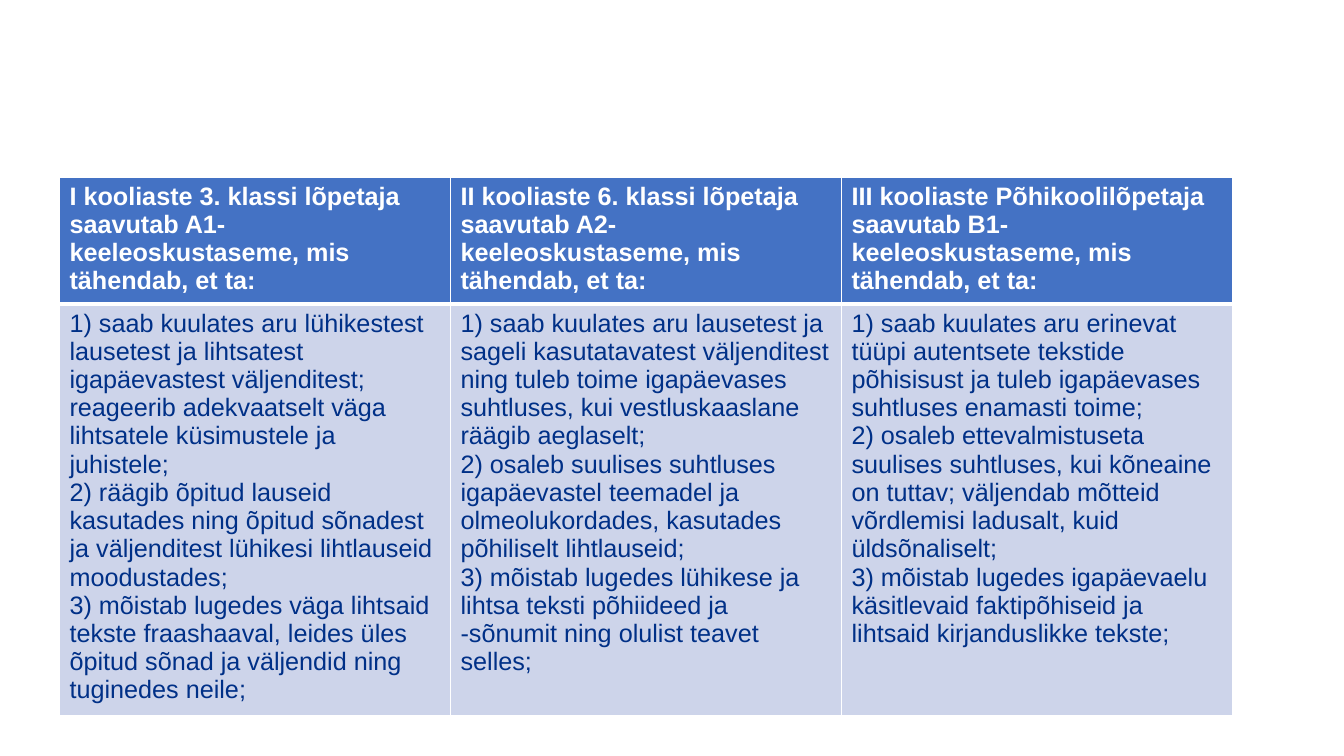
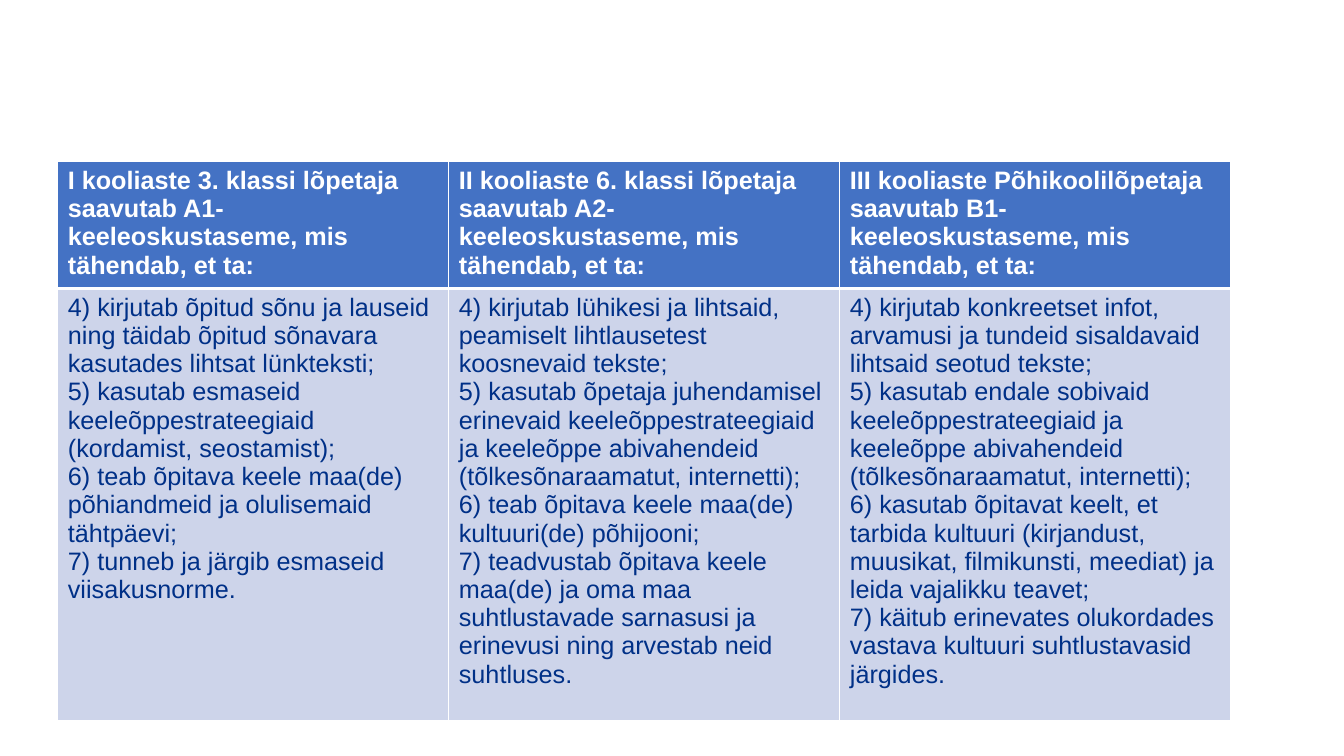
from lxml.etree import SubElement
from pptx import Presentation
from pptx.dml.color import RGBColor
from pptx.oxml.ns import qn
from pptx.util import Pt

WHITE = RGBColor(0xFF, 0xFF, 0xFF)
BLUE = RGBColor(0x44, 0x72, 0xC4)
NAVY = RGBColor(0x00, 0x30, 0x87)
PALE = RGBColor(0xCD, 0xD4, 0xEA)
FONT = "Arial"
SIZE = 18
COL = 279.3
HEAD = 90.6

HEADS = [
    "I kooliaste 3. klassi lõpetaja saavutab A1-keeleoskustaseme, mis tähendab, et ta:",
    "II kooliaste 6. klassi lõpetaja saavutab A2-keeleoskustaseme, mis tähendab, et ta:",
    "III kooliaste Põhikoolilõpetaja saavutab B1- keeleoskustaseme, mis tähendab, et ta:",
]

SPEECH = [
    [
        "1) saab kuulates aru lühikestest lausetest ja lihtsatest igapäevastest väljenditest; "
        "reageerib adekvaatselt väga lihtsatele küsimustele ja juhistele;",
        "2) räägib õpitud lauseid kasutades ning õpitud sõnadest ja väljenditest lühikesi "
        "lihtlauseid moodustades;",
        "3) mõistab lugedes väga lihtsaid tekste fraashaaval, leides üles õpitud sõnad ja "
        "väljendid ning tuginedes neile;",
    ],
    [
        "1) saab kuulates aru lausetest ja sageli kasutatavatest väljenditest ning tuleb toime "
        "igapäevases suhtluses, kui vestluskaaslane räägib aeglaselt;",
        "2) osaleb suulises suhtluses igapäevastel teemadel ja olmeolukordades, kasutades "
        "põhiliselt lihtlauseid;",
        "3) mõistab lugedes lühikese ja lihtsa teksti põhiideed ja -sõnumit ning olulist "
        "teavet selles;",
    ],
    [
        "1) saab kuulates aru erinevat tüüpi autentsete tekstide põhisisust ja tuleb "
        "igapäevases suhtluses enamasti toime;",
        "2) osaleb ettevalmistuseta suulises suhtluses, kui kõneaine on tuttav; väljendab "
        "mõtteid võrdlemisi ladusalt, kuid üldsõnaliselt;",
        "3) mõistab lugedes igapäevaelu käsitlevaid faktipõhiseid ja lihtsaid kirjanduslikke "
        "tekste;",
    ],
]

WRITING = [
    [
        "4) kirjutab õpitud sõnu ja lauseid ning täidab õpitud sõnavara kasutades lihtsat "
        "lünkteksti;",
        "5) kasutab esmaseid keeleõppestrateegiaid (kordamist, seostamist);",
        "6) teab õpitava keele maa(de) põhiandmeid ja olulisemaid tähtpäevi;",
        "7) tunneb ja järgib esmaseid viisakusnorme.",
    ],
    [
        "4) kirjutab lühikesi ja lihtsaid, peamiselt lihtlausetest koosnevaid tekste;",
        "5) kasutab õpetaja juhendamisel erinevaid keeleõppestrateegiaid ja keeleõppe "
        "abivahendeid (tõlkesõnaraamatut, internetti);",
        "6) teab õpitava keele maa(de) kultuuri(de) põhijooni;",
        "7) teadvustab õpitava keele maa(de) ja oma maa suhtlustavade sarnasusi ja erinevusi "
        "ning arvestab neid suhtluses.",
    ],
    [
        "4) kirjutab konkreetset infot, arvamusi ja tundeid sisaldavaid lihtsaid seotud tekste;",
        "5) kasutab endale sobivaid keeleõppestrateegiaid ja keeleõppe abivahendeid "
        "(tõlkesõnaraamatut, internetti);",
        "6) kasutab õpitavat keelt, et tarbida kultuuri (kirjandust, muusikat, filmikunsti, "
        "meediat) ja leida vajalikku teavet;",
        "7) käitub erinevates olukordades vastava kultuuri suhtlustavasid järgides.",
    ],
]


class Deck:
    """Holds the table style and the current slide."""

    def __init__(self):
        self.prs = Presentation()
        self.prs.slide_width, self.prs.slide_height = Pt(960), Pt(540)
        self.slide = None

    def page(self):
        self.slide = self.prs.slides.add_slide(self.prs.slide_layouts[6])

    def edge(self, cell, side, width):
        line = SubElement(cell._tc.get_or_add_tcPr(), qn(f"a:ln{side}"), w=str(Pt(width)))
        fill = SubElement(line, qn("a:solidFill"))
        SubElement(fill, qn("a:srgbClr"), val=str(WHITE))

    def cell(self, cell, lines, back, color, bold, top, base):
        for side, width in zip("LRTB", (1, 1, top, base)):
            self.edge(cell, side, width)
        cell.fill.solid()
        cell.fill.fore_color.rgb = back
        cell.text_frame.text = "\n".join(lines)
        for para in cell.text_frame.paragraphs:
            for run in para.runs:
                font = run.font
                font.name, font.size, font.bold = FONT, Pt(SIZE), bold
                font.color.rgb = color

    def table(self, left, top, body, goals):
        count = len(HEADS)
        frame = self.slide.shapes.add_table(
            2, count, Pt(left), Pt(top), Pt(COL * count), Pt(HEAD + body))
        grid = frame.table
        grid.rows[0].height, grid.rows[1].height = Pt(HEAD), Pt(body)
        for i, (head, lines) in enumerate(zip(HEADS, goals)):
            grid.columns[i].width = Pt(COL)
            self.cell(grid.cell(0, i), [head], BLUE, WHITE, True, 1, 3)
            self.cell(grid.cell(1, i), lines, PALE, NAVY, False, 3, 1)


def main():
    deck = Deck()
    for left, top, body, goals in (
        (42.5, 126.7, 293.5, SPEECH),
        (41.3, 115.4, 308.8, WRITING),
    ):
        deck.page()
        deck.table(left, top, body, goals)
    deck.prs.save("out.pptx")


if __name__ == "__main__":
    main()
